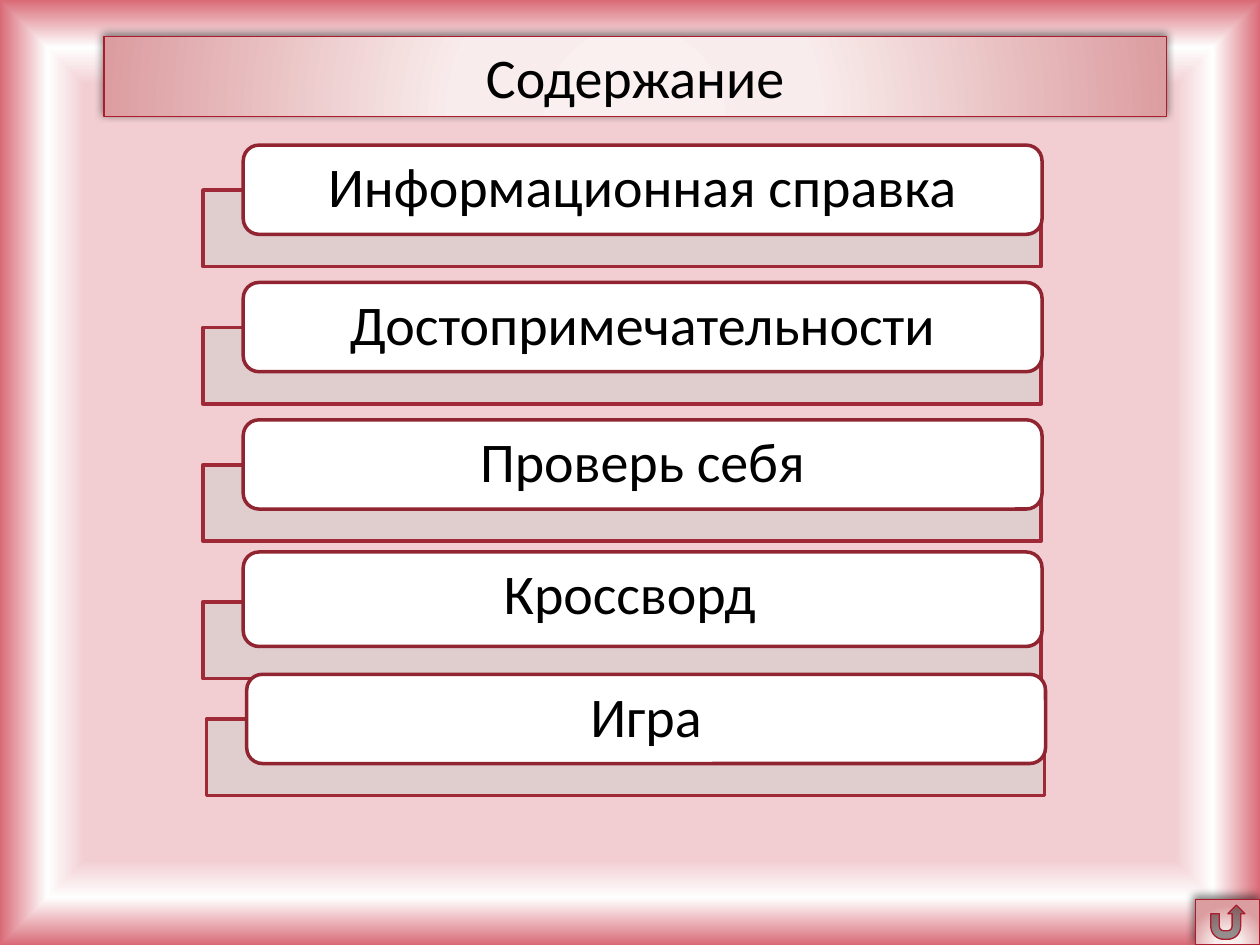
from lxml import etree
from pptx import Presentation
from pptx.dml.color import RGBColor
from pptx.enum import shapes, text
from pptx.oxml.ns import qn
from pptx.util import Pt

COLORS = {
    "back": "DFCDCE", "back_line": "9F2936", "tab": "FFFFFF", "tab_line": "902531",
    "button_line": "AB1D2D", "text": "000000", "shadow": "000000",
}
PAGE_STOPS = [(82, "F2CED2"), (90, "FFFFFF"), (100, "D96B77")]
BUTTON_STOPS = [(0, "FBF0F0"), (34, "F9ECEC"), (100, "DC9DA0")]
SHAPE = shapes.MSO_SHAPE


def rgb(name):
    return RGBColor.from_string(COLORS[name])


def add_color(parent, value, alpha=100):
    clr = etree.SubElement(parent, qn("a:srgbClr"), val=value)
    if alpha < 100:
        etree.SubElement(clr, qn("a:alpha"), val=str(alpha * 1000))


def set_radial_gradient(grad, stops, form, focus):
    """Refill a gradFill element; focus is left, top, right, bottom in percent."""
    for child in list(grad):
        grad.remove(child)
    gs_list = etree.SubElement(grad, qn("a:gsLst"))
    for pos, value in stops:
        add_color(etree.SubElement(gs_list, qn("a:gs"), pos=str(pos * 1000)), value)
    form_el = etree.SubElement(grad, qn("a:path"), {"path": form})
    edges = {side: str(pct * 1000) for side, pct in zip("ltrb", focus)}
    etree.SubElement(form_el, qn("a:fillToRect"), edges)


class Deck:
    font = "Calibri"
    size = 32

    def __init__(self, slide):
        self.s = slide

    def background(self):
        self.s.background.fill.gradient()
        grad = self.s.element.find(".//" + qn("a:gradFill"))
        set_radial_gradient(grad, PAGE_STOPS, "rect", (50, 50, 50, 50))

    def shape(self, kind, box, line, width):
        sp = self.s.shapes.add_shape(kind, *map(Pt, box))
        sp.shadow.inherit = False
        sp.line.color.rgb = rgb(line)
        sp.line.width = Pt(width)
        return sp

    def add_words(self, sp, words, anchor, spacing=1.0):
        tf = sp.text_frame
        tf.word_wrap = True
        tf.vertical_anchor = anchor
        p = tf.paragraphs[0]
        p.alignment = text.PP_ALIGN.CENTER
        p.line_spacing = spacing
        r = p.add_run()
        r.text = words
        r.font.name = self.font
        r.font.size = Pt(self.size)
        r.font.color.rgb = rgb("text")

    def label(self, words, box):
        sp = self.s.shapes.add_textbox(*map(Pt, box))
        self.add_words(sp, words, text.MSO_ANCHOR.TOP)

    def back(self, box):
        sp = self.shape(SHAPE.RECTANGLE, box, "back_line", 2)
        sp.fill.solid()
        sp.fill.fore_color.rgb = rgb("back")
        clr = sp.element.spPr.find(qn("a:solidFill"))[0]
        etree.SubElement(clr, qn("a:alpha"), val="90000")

    def tab(self, box, words=None):
        sp = self.shape(SHAPE.ROUNDED_RECTANGLE, box, "tab_line", 2)
        sp.adjustments[0] = 9 / box[3]
        sp.fill.solid()
        sp.fill.fore_color.rgb = rgb("tab")
        if words:
            tf = sp.text_frame
            tf.margin_left = tf.margin_right = Pt(15)
            tf.margin_top = tf.margin_bottom = Pt(3)
            self.add_words(sp, words, text.MSO_ANCHOR.MIDDLE, 0.9)

    def button(self, kind, box, words=None):
        """Shaded shape with a soft shadow, used for the title and the return button."""
        sp = self.shape(kind, box, "button_line", 0.75)
        sp.fill.gradient()
        sp_pr = sp.element.spPr
        set_radial_gradient(sp_pr.find(qn("a:gradFill")), BUTTON_STOPS,
                            "circle", (50, 155, 50, -55))
        shadow = etree.SubElement(
            sp_pr.find(qn("a:effectLst")), qn("a:outerShdw"), blurRad=str(Pt(5)),
            dist=str(Pt(2)), dir=str(245 * 60000), rotWithShape="0")
        add_color(shadow, COLORS["shadow"], 50)
        if words:
            self.add_words(sp, words, text.MSO_ANCHOR.TOP)


def main():
    prs = Presentation()
    prs.slide_width, prs.slide_height = Pt(720), Pt(540)
    deck = Deck(prs.slides.add_slide(prs.slide_layouts[6]))
    deck.background()

    left, top, pitch = 116, 108.6, 78.5
    indent, rise, tab_height = 23, 25.7, 51
    topics = ["Информационная справка", "Достопримечательности", "Проверь себя"]
    for i, topic in enumerate(topics):
        y = top + i * pitch
        deck.back((left, y, 479, 43.7))
        deck.tab((left + indent, y - rise, 456.5, tab_height), topic)

    deck.back((left, top + 3 * pitch, 479, 43.7))
    deck.tab((left + indent, 315.4, 456.5, 54))

    deck.back((left + 2, 411, 479, 43.7))
    deck.tab((left + 2 + indent, 411 - rise, 456.5, tab_height), "Игра")

    deck.label("Кроссворд", (141.8, 315.4, 436.3, 46))
    deck.button(SHAPE.RECTANGLE, (59.5, 20.7, 607, 46), "Содержание")
    deck.button(SHAPE.ACTION_BUTTON_RETURN, (683.3, 514, 36.7, 26))
    prs.save("out.pptx")


if __name__ == "__main__":
    main()
